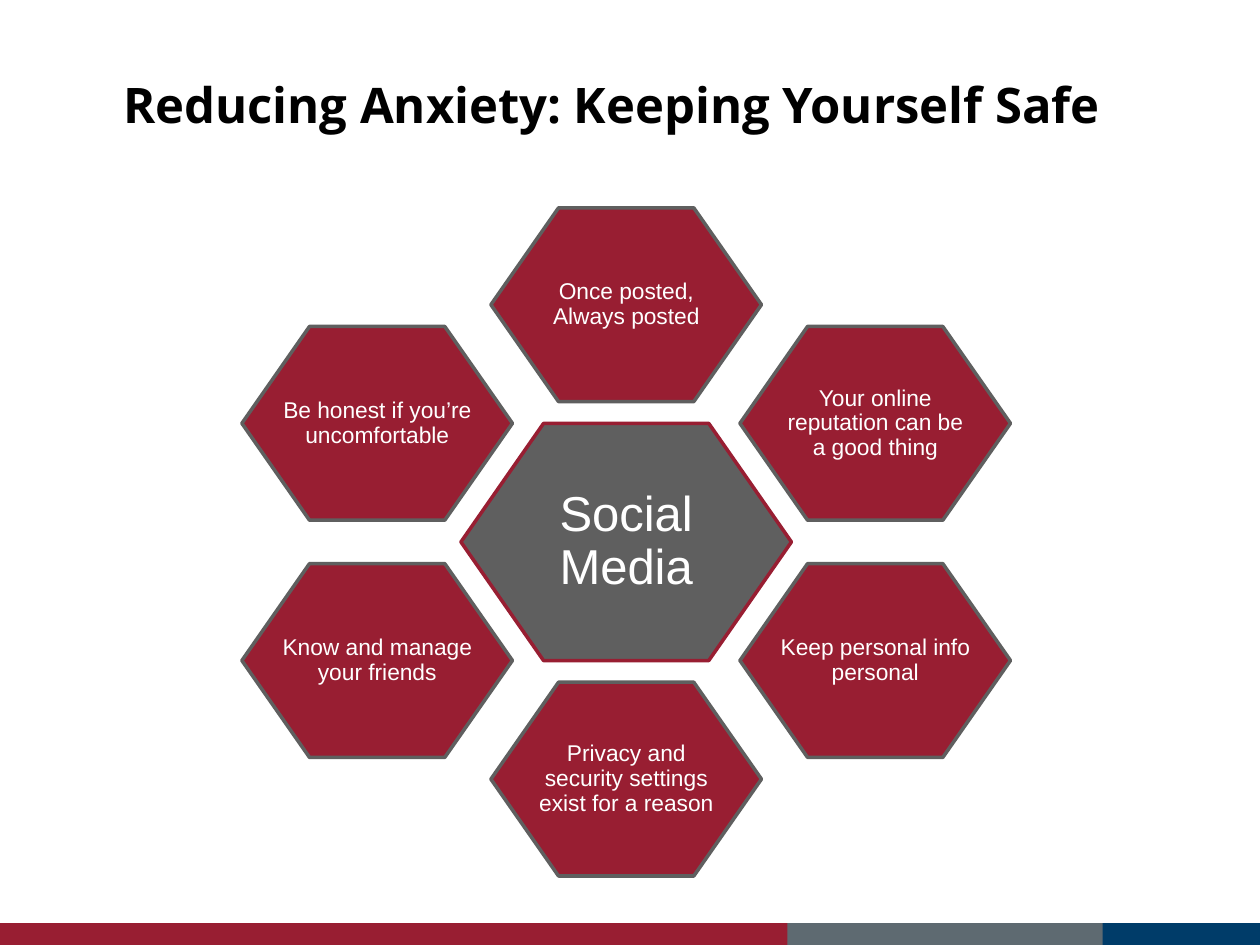
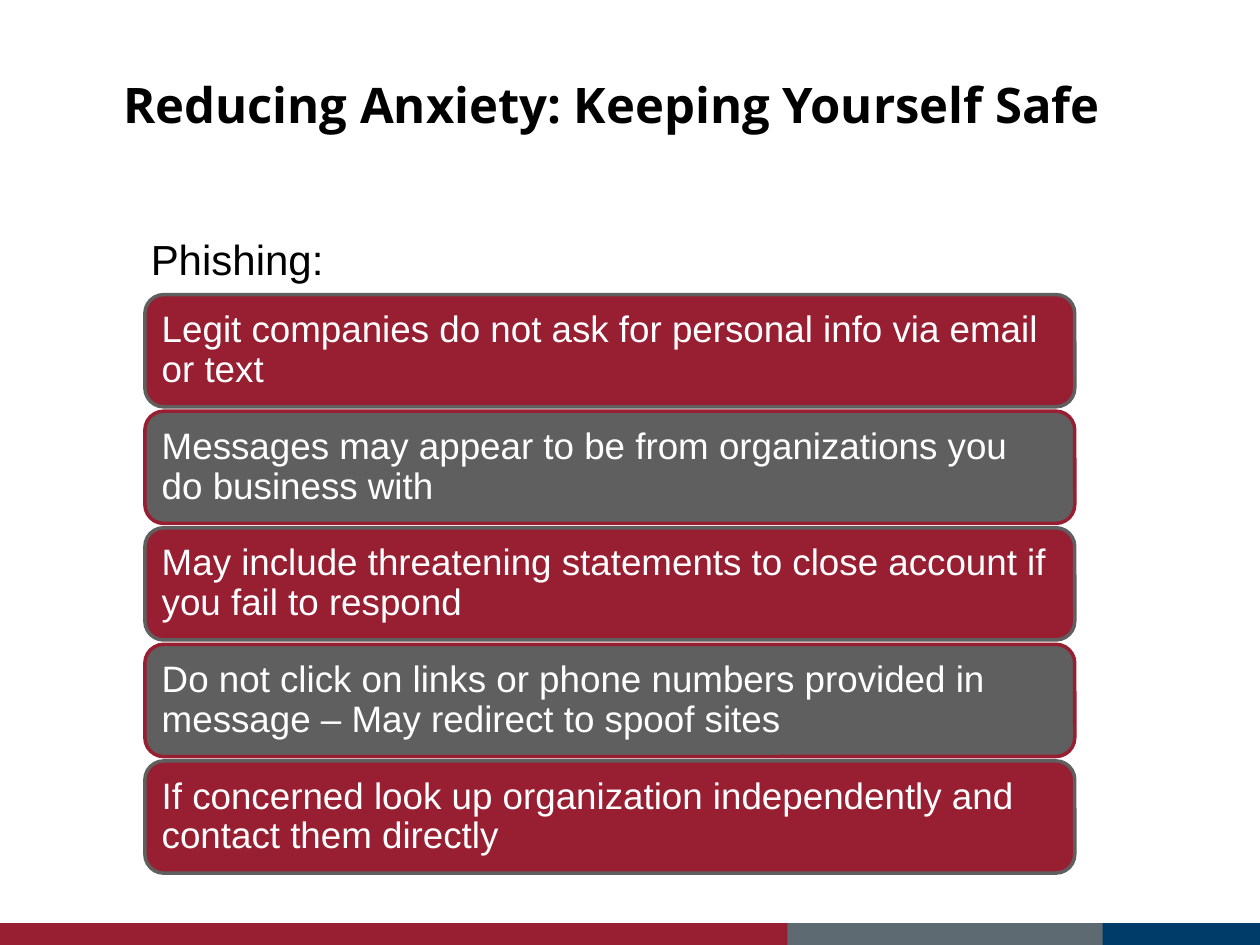
"""Build two slides on keeping yourself safe online."""
from collections import namedtuple

from lxml import etree
from pptx import Presentation
from pptx.dml.color import RGBColor
from pptx.enum.shapes import MSO_SHAPE
from pptx.enum.text import MSO_ANCHOR, PP_ALIGN
from pptx.util import Inches, Pt

RECTANGLE, ROUNDED = MSO_SHAPE.RECTANGLE, MSO_SHAPE.ROUNDED_RECTANGLE
TOP, MIDDLE, BOTTOM = MSO_ANCHOR.TOP, MSO_ANCHOR.MIDDLE, MSO_ANCHOR.BOTTOM
LEFT, CENTER = PP_ALIGN.LEFT, PP_ALIGN.CENTER

CRIMSON, GRAY, SLATE, NAVY = "981E32", "5F5F5F", "5E6A71", "003C69"
BLACK, WHITE = "000000", "FFFFFF"
TITLE = "Reducing Anxiety: Keeping Yourself Safe"
TITLE_FONT = {"name": "Open Sans", "size": Pt(28), "bold": True}
HEADING_FONT = {"name": "Arial", "size": Pt(24)}
HUB_FONT = {"name": "Arial", "size": Pt(28)}
PETAL_FONT = {"name": "Arial", "size": Pt(13)}
BAR_FONT = {"name": "Arial", "size": Pt(21)}

Box = namedtuple("Box", "left top width height")
SLIDE = Box(0, 0, 10, 7.5)
FOOTER_BANDS = [(0, 0.63, CRIMSON), (0.625, 0.274, SLATE), (0.875, 0.125, NAVY)]

PETALS = [
    (0, -2, "Once posted, Always posted"),
    (1, -1, "Your online reputation can be a good thing"),
    (1, 1, "Keep personal info personal"),
    (0, 2, "Privacy and security settings exist for a reason"),
    (-1, 1, "Know and manage your friends"),
    (-1, -1, "Be honest if you’re uncomfortable"),
]
WARNINGS = [
    "Legit companies do not ask for personal info via email or text",
    "Messages may appear to be from organizations you do business with",
    "May include threatening statements to close account if you fail to respond",
    "Do not click on links or phone numbers provided in message – May redirect to spoof sites",
    "If concerned look up organization independently and contact them directly",
]


def color(value):
    """Turn a hex string into a colour."""
    return RGBColor.from_string(value)


def part(box, left, top, width, height):
    """Return the part of a box given by shares of its size."""
    return Box(box.left + left * box.width, box.top + top * box.height,
               width * box.width, height * box.height)


def emu(box):
    """Convert a box in inches to slide units."""
    return [Inches(length) for length in box]


def apply(target, values):
    """Set each attribute in a dict of format values."""
    for name, value in values.items():
        setattr(target, name, value)


def paint(shape, fill, line=None):
    """Give a shape a flat fill, an optional outline and no shadow."""
    shape.shadow.inherit = False
    shape.fill.solid()
    shape.fill.fore_color.rgb = color(fill)
    if line:
        shape.line.color.rgb = color(line)
        shape.line.width = Pt(2)
    else:
        shape.line.fill.background()


def write(shape, text, font, ink=WHITE, anchor=MIDDLE, align=LEFT,
          insets=(0.1, 0.05), spacing=0.9, wrap=True):
    """Write one formatted paragraph into a shape."""
    across, down = map(Inches, insets)
    frame = shape.text_frame
    apply(frame, {"word_wrap": wrap, "vertical_anchor": anchor,
                  "margin_left": across, "margin_right": across,
                  "margin_top": down, "margin_bottom": down})
    para = frame.paragraphs[0]
    apply(para, {"alignment": align, "line_spacing": spacing})
    span = para.add_run()
    span.text = text
    apply(span.font, font)
    span.font.color.rgb = color(ink)


def add_footer(page, box):
    """Lay the coloured bands along a footer box."""
    for left, width, fill in FOOTER_BANDS:
        band = page.shapes.add_shape(RECTANGLE, *emu(part(box, left, 0, width, 1)))
        paint(band, fill)


def add_page(deck):
    """Add a blank page with the shared footer and title."""
    page = deck.slides.add_slide(deck.slide_layouts[6])
    add_footer(page, part(SLIDE, 0, 0.977, 1, 0.023))
    title = page.shapes.add_textbox(*emu(part(SLIDE, 0.088, 0.077, 0.85, 0.071)))
    write(title, TITLE, TITLE_FONT, BLACK, BOTTOM)
    return page


def add_hexagon(page, box, text, font, fill, line):
    """Draw a labelled hexagon whose shoulders sit a quarter in."""
    outline = [(0, 0.5), (0.25, 0), (0.75, 0), (1, 0.5), (0.75, 1), (0.25, 1)]
    corners = [(Inches(box.left + x * box.width), Inches(box.top + y * box.height))
               for x, y in outline]
    builder = page.shapes.build_freeform(*corners[0])
    builder.add_line_segments(corners[1:], close=True)
    hexagon = builder.convert_to_shape()
    paint(hexagon, fill, line)
    write(hexagon, text, font, align=CENTER,
          insets=(0.145 * box.width, 0.175 * box.height))


def add_flower(page, box):
    """Set six petals around a hub on a grid of half rows."""
    hub_width, hub_height = 0.43, 0.355
    petal_width, petal_height = 0.352, 0.29
    column, half_row = 0.324, 0.1775
    hub = part(box, 0.5 - hub_width / 2, 0.5 - hub_height / 2, hub_width, hub_height)
    add_hexagon(page, hub, "Social Media", HUB_FONT, GRAY, CRIMSON)
    for across, down, text in PETALS:
        petal = part(box, 0.5 + across * column - petal_width / 2,
                     0.5 + down * half_row - petal_height / 2,
                     petal_width, petal_height)
        add_hexagon(page, petal, text, PETAL_FONT, CRIMSON, GRAY)


def add_warnings(page, box):
    """Stack the warnings as bars of alternating colours."""
    row = 1 / len(WARNINGS)
    gap = 0.0075
    pitch = row + gap / len(WARNINGS)
    for index, text in enumerate(WARNINGS):
        fill, line = (GRAY, CRIMSON) if index % 2 else (CRIMSON, GRAY)
        place = part(box, 0, index * pitch, 1, pitch - gap)
        bar = page.shapes.add_shape(ROUNDED, *emu(place))
        paint(bar, fill, line)
        write(bar, text, BAR_FONT, insets=(0.09, 0.09))


def add_phishing(page, box):
    """Place the heading over the stack of warnings."""
    heading = page.shapes.add_textbox(*emu(part(box, -0.007, 0, 0.215, 0.158)))
    write(heading, "Phishing:", HEADING_FONT, BLACK, TOP, spacing=1.0, wrap=False)
    add_warnings(page, part(box, 0, 0.105, 1, 0.895))


def main():
    """Build and save the deck."""
    deck = Presentation()
    deck.slide_width, deck.slide_height = emu(SLIDE)[2:]
    add_flower(add_page(deck), part(SLIDE, 0.192, 0.22, 0.61, 0.707))
    add_phishing(add_page(deck), part(SLIDE, 0.115, 0.24, 0.738, 0.684))
    deck.save("out.pptx")


if __name__ == "__main__":
    main()
